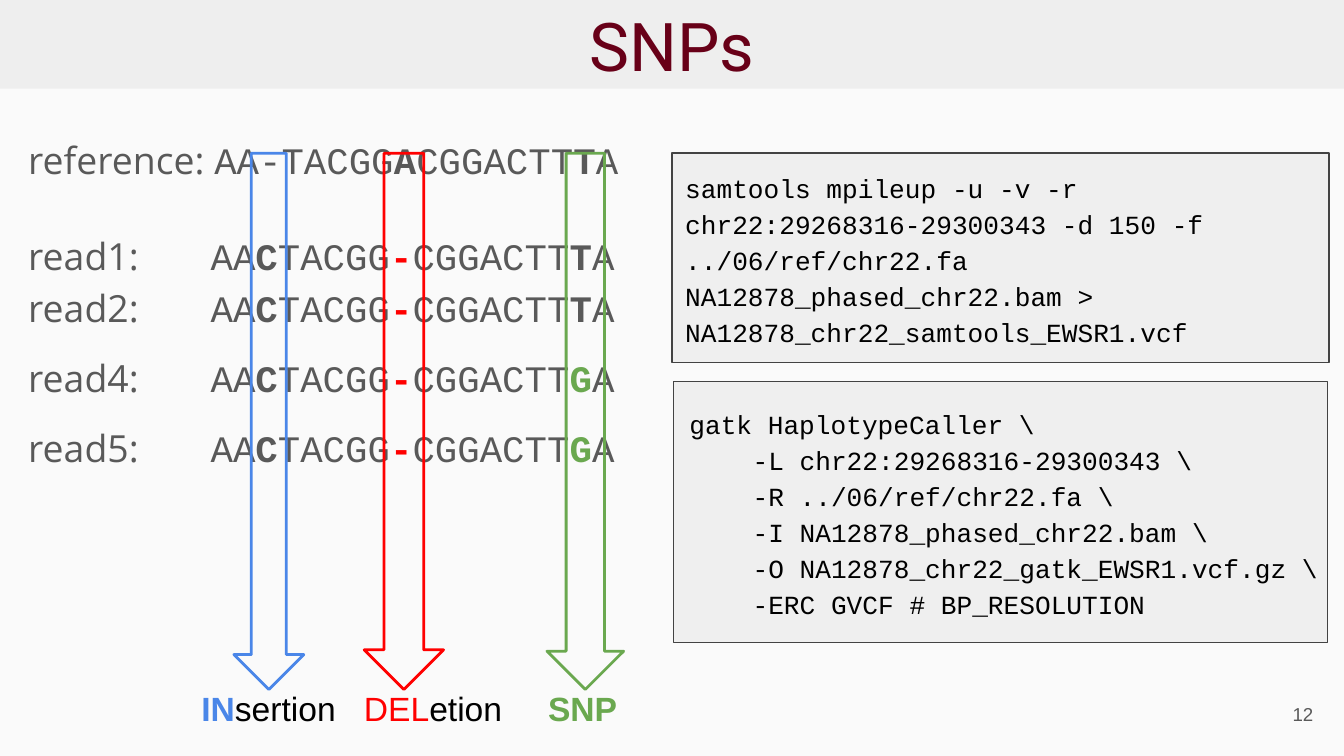
"""Build the SNPs slide: aligned reads, variant arrows and calling commands."""
from lxml import etree
from pptx import Presentation
from pptx import util as u
from pptx.dml.color import RGBColor
from pptx.enum import shapes, text
from pptx.oxml import ns

INK, BLACK, MAROON, EDGE = "595959", "000000", "680018", "434343"
BLUE, RED, GREEN = "4A86E8", "FF0000", "6AA84F"
PAPER, BAND, PANEL = "FAFAFA", "EEEEEE", "EFEFEF"
MONO = "Courier New"

REFERENCE = [("AA-TACGG", INK, False), ("A", INK, True), ("CGGACTT", INK, False),
             ("T", INK, True), ("A", INK, False)]
READS = [("read1:\t", "T", INK, 24), ("read2:\t", "T", INK, 0),
         ("read4:\t", "G", GREEN, 10), ("read5:\t", "G", GREEN, 10)]
LABEL_GAP = 20.5
ARROWS = [(1.74, 0.52, BLUE), (4.07, 0.57, GREEN), (2.71, 0.59, RED)]
CAPTIONS = [(1.4, [("IN", BLUE, True), ("sertion", BLACK, False)]),
            (2.61, [("DEL", RED, False), ("etion", BLACK, False)]),
            (3.98, [("SNP", GREEN, True)])]
SAMTOOLS = ["samtools mpileup -u -v -r chr22:29268316-29300343 -d 150 "
            "-f ../06/ref/chr22.fa NA12878_phased_chr22.bam > "
            "NA12878_chr22_samtools_EWSR1.vcf"]
GATK = ["gatk HaplotypeCaller \\", "-L chr22:29268316-29300343 \\",
        "-R ../06/ref/chr22.fa \\", "-I NA12878_phased_chr22.bam \\",
        "-O NA12878_chr22_gatk_EWSR1.vcf.gz \\", "-ERC GVCF # BP_RESOLUTION"]
PANELS = [((5, 1.14, 4.89, 1.56), SAMTOOLS, 0.1, 0.1),
          ((5.01, 2.84, 4.87, 1.94), GATK, 0.12, 0)]
CODE_INDENT = 0.47


def color(value):
    return RGBColor.from_string(value)


def place(shape, area):
    shape.left, shape.top, shape.width, shape.height = map(u.Inches, area)


def paint(shape, fill=None, line=None, width=0.75):
    if fill:
        shape.fill.solid()
        shape.fill.fore_color.rgb = color(fill)
    else:
        shape.fill.background()
    if line:
        shape.line.color.rgb = color(line)
        shape.line.width = u.Pt(width)
    else:
        shape.line.fill.background()


def set_frame(shape, anchor=text.MSO_ANCHOR.TOP, left=0.1, right=0.1):
    frame = shape.text_frame
    frame.word_wrap = True
    frame.auto_size = text.MSO_AUTO_SIZE.NONE
    frame.vertical_anchor = anchor
    frame.margin_left, frame.margin_right = u.Inches(left), u.Inches(right)
    frame.margin_top = frame.margin_bottom = u.Inches(0.1)
    return frame


def add_span(para, words, size, font, tint, bold=False):
    span = para.add_run()
    span.text = words
    span.font.size, span.font.name, span.font.bold = u.Pt(size), font, bold
    span.font.color.rgb = color(tint)
    return span


def space(para, before=0):
    para.line_spacing = 1.15
    para.space_before, para.space_after = u.Pt(before), u.Pt(0)


def indent(para, left):
    props = para._p.get_or_add_pPr()
    props.set("marL", str(u.Inches(left)))
    props.set("indent", "0")
    return props


def paragraphs(frame, count):
    for _ in range(count - 1):
        frame.add_paragraph()
    return frame.paragraphs


def add_title(page):
    box = page.shapes.title
    place(box, (0, 0, 10, 0.66))
    paint(box, BAND)
    para = set_frame(box, text.MSO_ANCHOR.MIDDLE).paragraphs[0]
    para.alignment = text.PP_ALIGN.CENTER
    add_span(para, "SNPs", 36, "Roboto", MAROON)


def add_reads(page):
    box = page.placeholders[1]
    place(box, (0.11, 0.87, 6.72, 4.09))
    rows = [("reference:", REFERENCE, 10, 0)]
    for label, base, tint, before in READS:
        bases = [("AA", INK, False), ("C", INK, True), ("TACGG", INK, False),
                 ("-", RED, True), ("CGGACTT", INK, False),
                 (base, tint, True), ("A", INK, False)]
        rows.append((label, bases, before, LABEL_GAP))
    for para, (label, bases, before, gap) in zip(
            paragraphs(set_frame(box), len(rows)), rows):
        space(para, before)
        etree.SubElement(indent(para, 0), ns.qn("a:buNone"))
        add_span(para, label, 20, "Open Sans", INK)
        spacer = add_span(para, " ", 20, "Open Sans", INK)
        spacer.font._element.set("spc", str(int(gap * 100)))
        for words, tint, bold in bases:
            add_span(para, words, 20, MONO, tint, bold)


def add_page_number(page):
    box = page.shapes.add_textbox(*map(u.Inches, (9.27, 5.1, 0.6, 0.43)))
    para = set_frame(box, text.MSO_ANCHOR.MIDDLE).paragraphs[0]
    para.alignment = text.PP_ALIGN.RIGHT
    add_span(para, "12", 10, "Arial", INK)


def add_arrows(page):
    for left, width, tint in ARROWS:
        arrow = page.shapes.add_shape(shapes.MSO_SHAPE.DOWN_ARROW,
                                      *map(u.Inches, (left, 1.14, width, 3.99)))
        arrow.shadow.inherit = False
        paint(arrow, line=tint, width=1.5)


def add_captions(page):
    for left, spans in CAPTIONS:
        box = page.shapes.add_textbox(*map(u.Inches, (left, 5.02, 1.2, 0.6)))
        para = set_frame(box, right=0).paragraphs[0]
        for words, tint, bold in spans:
            add_span(para, words, 18, "Arial", tint, bold)


def add_panels(page):
    for area, lines, left, right in PANELS:
        box = page.shapes.add_shape(shapes.MSO_SHAPE.RECTANGLE, *map(u.Inches, area))
        box.shadow.inherit = False
        paint(box, PANEL, EDGE)
        frame = set_frame(box, text.MSO_ANCHOR.MIDDLE, left, right)
        for row, para in enumerate(paragraphs(frame, len(lines))):
            space(para)
            para.alignment = text.PP_ALIGN.LEFT
            indent(para, CODE_INDENT if row else 0)
            add_span(para, lines[row], 14, MONO, BLACK)


def main():
    deck = Presentation()
    deck.slide_width = u.Inches(10)
    deck.slide_height = deck.slide_width * 9 // 16
    page = deck.slides.add_slide(deck.slide_layouts[1])
    page.background.fill.solid()
    page.background.fill.fore_color.rgb = color(PAPER)
    for add_part in (add_title, add_reads, add_page_number,
                     add_arrows, add_captions, add_panels):
        add_part(page)
    deck.save("out.pptx")


if __name__ == "__main__":
    main()
